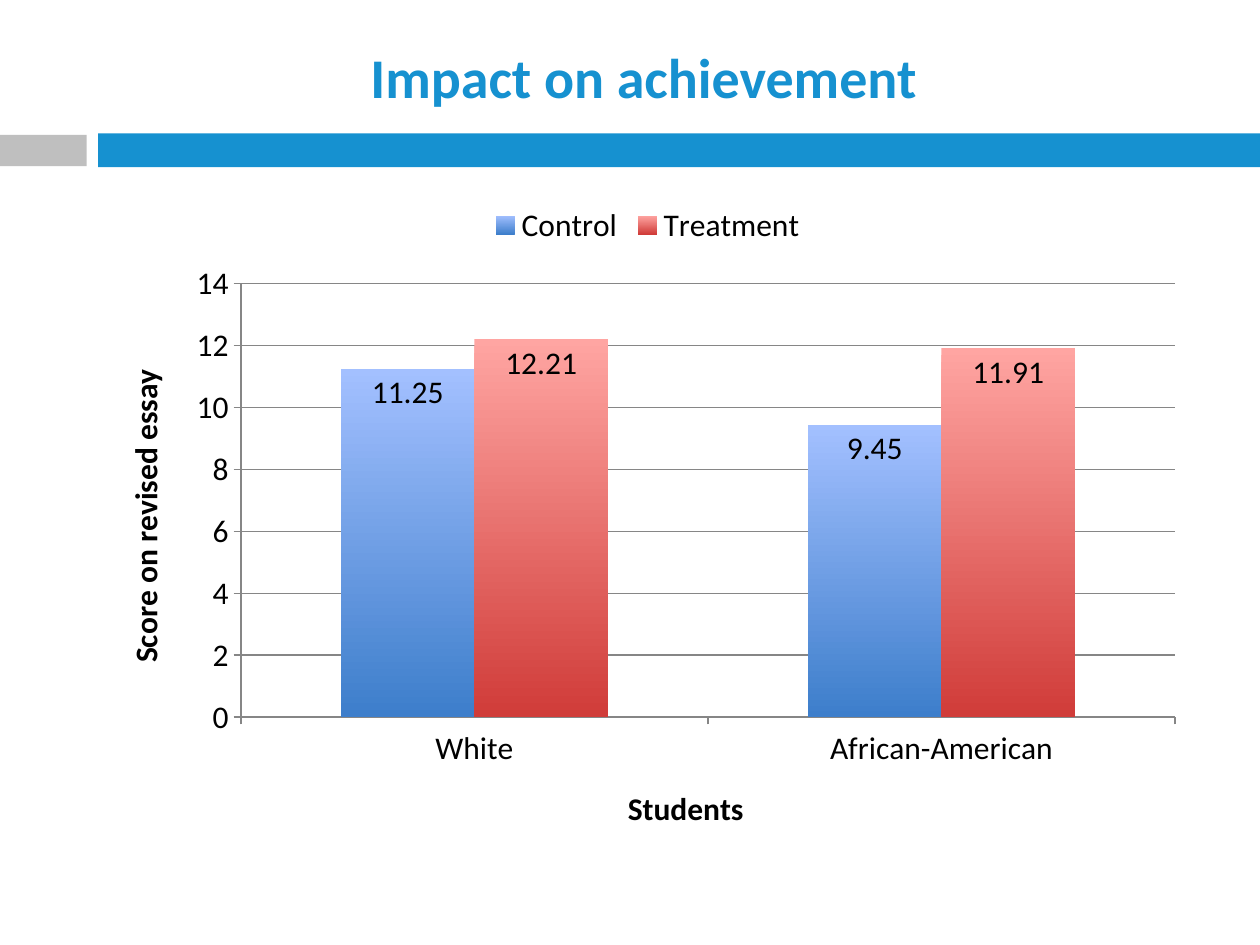
from lxml import etree
from pptx import Presentation
from pptx import util as u
from pptx.chart import data as chart_data
from pptx.dml.color import RGBColor
from pptx.enum import chart as ch, shapes, text
from pptx.oxml import ns

BLUE = RGBColor(0x16, 0x91, 0xD0)
GREY = RGBColor(0xBF, 0xBF, 0xBF)
BLACK = RGBColor(0, 0, 0)
AXIS_GREY = RGBColor(0x86, 0x86, 0x86)
CONTROL_TOP = RGBColor(0xA3, 0xC0, 0xFF)
CONTROL_BOTTOM = RGBColor(0x3D, 0x7E, 0xCB)
TREATMENT_TOP = RGBColor(0xFF, 0xA5, 0xA2)
TREATMENT_BOTTOM = RGBColor(0xD0, 0x3C, 0x39)

deck = Presentation()
deck.slide_width = u.Cm(25.4)
deck.slide_height = u.Cm(19.05)
slide = deck.slides.add_slide(deck.slide_layouts[5])

for left, top, width, height, color in (
    (1.98, 2.69, 23.42, 0.68, BLUE),
    (0, 2.72, 1.75, 0.63, GREY),
):
    band = slide.shapes.add_shape(
        shapes.MSO_SHAPE.RECTANGLE, u.Cm(left), u.Cm(top), u.Cm(width), u.Cm(height))
    band.shadow.inherit = False
    band.fill.solid()
    band.fill.fore_color.rgb = color
    band.line.fill.background()

heading = slide.shapes.title
heading.left, heading.top = u.Cm(1.98), u.Cm(0.66)
heading.width, heading.height = u.Cm(22), u.Cm(1.73)
heading.text_frame.text = "Impact on achievement"
heading.text_frame.vertical_anchor = text.MSO_ANCHOR.MIDDLE
heading_line = heading.text_frame.paragraphs[0]
heading_line.alignment = text.PP_ALIGN.CENTER
heading_line.font.name = "Calibri"
heading_line.font.size = u.Pt(32)
heading_line.font.bold = True
heading_line.font.color.rgb = BLUE

scores = chart_data.CategoryChartData()
scores.categories = ["White", "African-American"]
scores.add_series("Control", (11.25, 9.45))
scores.add_series("Treatment", (12.21, 11.91))
essay_chart = slide.shapes.add_chart(
    ch.XL_CHART_TYPE.COLUMN_CLUSTERED,
    u.Cm(1.98), u.Cm(3.84), u.Cm(22.15), u.Cm(13.44), scores).chart
essay_chart.has_title = False
essay_chart.font.name = "Calibri"
essay_chart.font.size = u.Pt(18)
essay_chart.font.color.rgb = BLACK
essay_chart.has_legend = True
essay_chart.legend.position = ch.XL_LEGEND_POSITION.TOP
essay_chart.legend.include_in_layout = False

columns = essay_chart.plots[0]
columns.gap_width = 150
columns.overlap = 0
columns.vary_by_categories = False
gradients = ((CONTROL_TOP, CONTROL_BOTTOM), (TREATMENT_TOP, TREATMENT_BOTTOM))
for group, colors in zip(columns.series, gradients):
    group.format.fill.gradient()
    group.format.fill.gradient_angle = 270
    for stop, color, position in zip(group.format.fill.gradient_stops, colors, (0, 1)):
        stop.color.rgb = color
        stop.position = position
    group.data_labels.show_value = True
    group.data_labels.position = ch.XL_LABEL_POSITION.INSIDE_END

students, score = essay_chart.category_axis, essay_chart.value_axis
score.minimum_scale, score.maximum_scale, score.major_unit = 0, 14, 2
score.has_major_gridlines = True
for axis, caption in ((students, "Students"), (score, "Score on revised essay")):
    axis.major_tick_mark = ch.XL_TICK_MARK.OUTSIDE
    axis.minor_tick_mark = ch.XL_TICK_MARK.NONE
    axis.axis_title.text_frame.text = caption
    caption_font = axis.axis_title.text_frame.paragraphs[0].font
    caption_font.name = "Calibri"
    caption_font.size = u.Pt(18)
    caption_font.bold = True
    caption_font.color.rgb = BLACK
for line in (students.format.line, score.format.line, score.major_gridlines.format.line):
    line.color.rgb = AXIS_GREY
    line.width = u.Pt(0.75)

plot_area = columns._element.getparent()
for old_layout in plot_area.findall(ns.qn("c:layout")):
    plot_area.remove(old_layout)
layout = etree.Element(ns.qn("c:layout"))
plot_area.insert(0, layout)
manual = etree.SubElement(layout, ns.qn("c:manualLayout"))
for tag, value in (
    ("layoutTarget", "inner"), ("xMode", "edge"), ("yMode", "edge"),
    ("x", "0.13"), ("y", "0.14"), ("w", "0.85"), ("h", "0.65"),
):
    etree.SubElement(manual, ns.qn("c:" + tag)).set("val", value)

deck.save("out.pptx")
